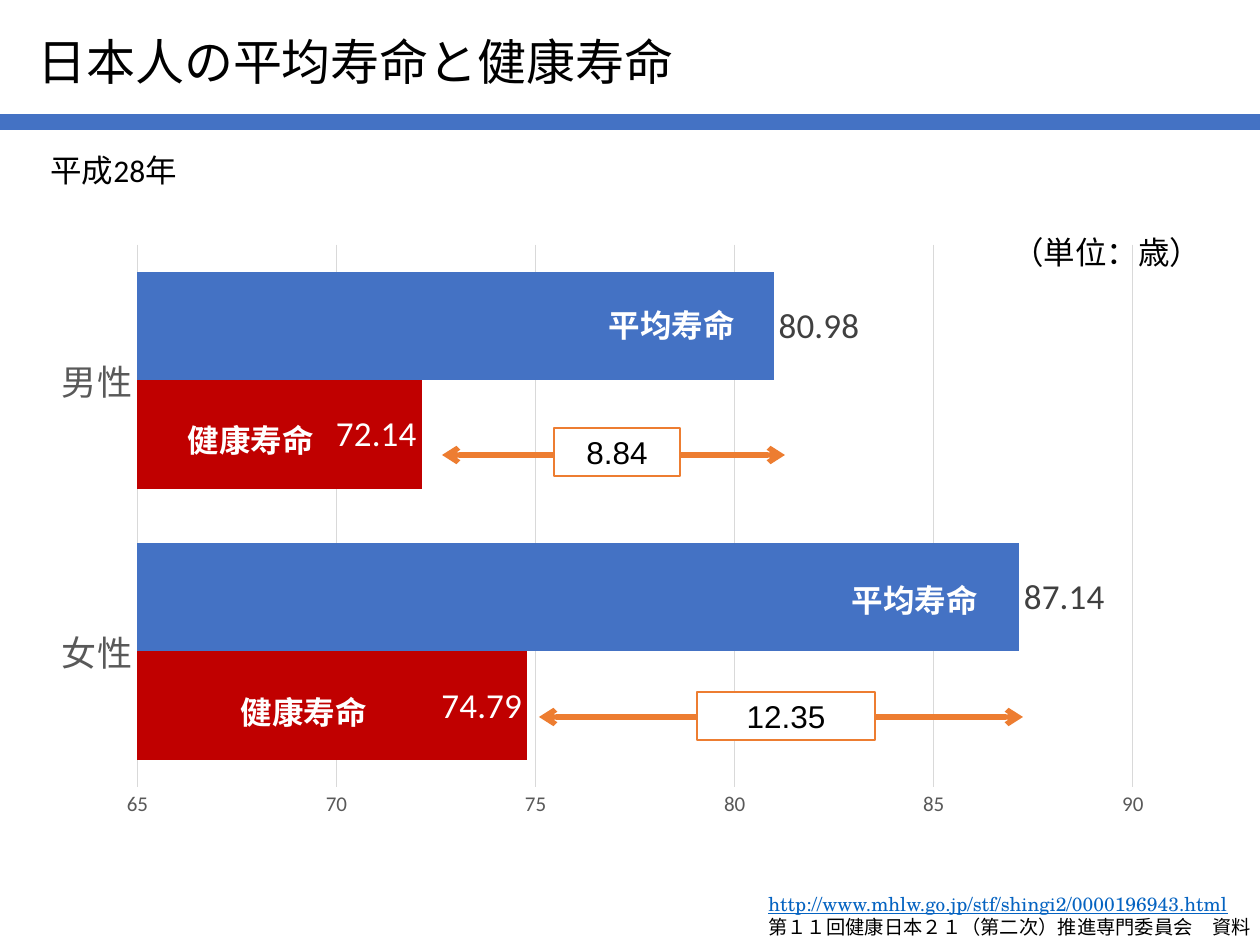
"""Builds a slide comparing average and healthy life expectancy in Japan."""
import pptx
import pptx.chart.data
import pptx.dml.color
import pptx.enum.chart
import pptx.enum.shapes
import pptx.enum.text
import pptx.oxml
import pptx.oxml.ns
import pptx.util
from lxml import etree

PX = 914400 / 126
RGB = pptx.dml.color.RGBColor
BLACK = RGB(0x00, 0x00, 0x00)
WHITE = RGB(0xFF, 0xFF, 0xFF)
BLUE = RGB(0x44, 0x72, 0xC4)
RED = RGB(0xC0, 0x00, 0x00)
ORANGE = RGB(0xED, 0x7D, 0x31)
LINK_BLUE = RGB(0x05, 0x63, 0xC1)
AXIS_GRAY = RGB(0x59, 0x59, 0x59)
LABEL_GRAY = RGB(0x40, 0x40, 0x40)
GRID_GRAY = RGB(0xD9, 0xD9, 0xD9)
ALIGN = pptx.enum.text.PP_ALIGN
LABEL_POSITION = pptx.enum.chart.XL_LABEL_POSITION


def add_text(frame, lines, size, font="Calibri", align=ALIGN.LEFT, bold=False):
    frame.word_wrap = True
    for index, (words, color, underline) in enumerate(lines):
        paragraph = frame.add_paragraph() if index else frame.paragraphs[0]
        paragraph.alignment = align
        run = paragraph.add_run()
        run.text = words
        run.font.size = pptx.util.Pt(size)
        run.font.name = font
        run.font.bold = bold
        run.font.underline = underline
        run.font.color.rgb = color


def add_line(shapes, left, right, y, color, width):
    line = shapes.add_connector(
        pptx.enum.shapes.MSO_CONNECTOR.STRAIGHT,
        *[round(v * PX) for v in (left, y, right, y)])
    line.line.color.rgb = color
    line.line.width = pptx.util.Pt(width)
    etree.SubElement(line._element.spPr, pptx.oxml.ns.qn("a:effectLst"))
    return line


presentation = pptx.Presentation()
presentation.slide_width = round(1260 * PX)
presentation.slide_height = round(945 * PX)
slide = presentation.slides.add_slide(presentation.slide_layouts[6])

add_line(slide.shapes, 0, 1260, 122, BLUE, 9)

life_data = pptx.chart.data.CategoryChartData(number_format="0.00")
life_data.categories = ["女性", "男性"]
life_data.add_series("健康寿命", (74.79, 72.14))
life_data.add_series("平均寿命", (87.14, 80.98))
life_chart = slide.shapes.add_chart(
    pptx.enum.chart.XL_CHART_TYPE.BAR_CLUSTERED,
    *[round(v * PX) for v in (60, 244, 1106, 617)], life_data).chart
life_chart.has_legend = False
life_chart.has_title = False
life_chart.font.name = "Calibri"
life_chart.font.size = pptx.util.Pt(10)

bars = life_chart.plots[0]
bars.gap_width = 50
bars.overlap = 0
bars.vary_by_categories = False
for series, fill, ink, position in zip(
        bars.series, (RED, BLUE), (WHITE, LABEL_GRAY),
        (LABEL_POSITION.INSIDE_END, LABEL_POSITION.OUTSIDE_END)):
    series.format.fill.solid()
    series.format.fill.fore_color.rgb = fill
    values = series.data_labels
    values.show_value = True
    values.position = position
    values.font.name = "Calibri"
    values.font.size = pptx.util.Pt(20)
    values.font.color.rgb = ink

sexes, ages = life_chart.category_axis, life_chart.value_axis
for axis, size in ((sexes, 20), (ages, 12)):
    axis.major_tick_mark = pptx.enum.chart.XL_TICK_MARK.NONE
    axis.minor_tick_mark = pptx.enum.chart.XL_TICK_MARK.NONE
    axis.tick_labels.font.name = "Calibri"
    axis.tick_labels.font.size = pptx.util.Pt(size)
    axis.tick_labels.font.color.rgb = AXIS_GRAY
ages.minimum_scale, ages.maximum_scale, ages.major_unit = 65, 90, 5
ages.tick_labels.number_format = "0"
ages.tick_labels.number_format_is_linked = False
ages.format.line.fill.background()
for rule in (sexes.format.line, ages.major_gridlines.format.line):
    rule.color.rgb = GRID_GRAY
    rule.width = pptx.util.Pt(0.75)

plot_area = life_chart._chartSpace.chart.plotArea
for old_layout in plot_area.findall(pptx.oxml.ns.qn("c:layout")):
    plot_area.remove(old_layout)
plot_area.insert(0, pptx.oxml.parse_xml(
    f'<c:layout {pptx.oxml.ns.nsdecls("c")}><c:manualLayout>'
    '<c:layoutTarget val="inner"/><c:xMode val="edge"/><c:yMode val="edge"/>'
    '<c:x val="0.07"/><c:y val="0"/><c:w val="0.9"/><c:h val="0.88"/>'
    '</c:manualLayout></c:layout>'))

for words, box, size, align, ink, bold in (
        ("日本人の平均寿命と健康寿命", (25, 25, 707, 72), 28, ALIGN.LEFT, BLACK, False),
        ("平成28年", (38, 145, 168, 50), 18, ALIGN.LEFT, BLACK, False),
        ("（単位：歳）", (1000, 227, 218, 50), 18, ALIGN.LEFT, BLACK, False),
        ("健康寿命", (170, 415, 156, 50), 18, ALIGN.RIGHT, WHITE, True),
        ("健康寿命", (223, 687, 156, 50), 18, ALIGN.RIGHT, WHITE, True),
        ("平均寿命", (587, 300, 169, 50), 18, ALIGN.CENTER, WHITE, True),
        ("平均寿命", (830, 575, 169, 50), 18, ALIGN.CENTER, WHITE, True)):
    caption = slide.shapes.add_textbox(*[round(v * PX) for v in box])
    add_text(caption.text_frame, [(words, ink, False)], size, align=align, bold=bold)

citation = slide.shapes.add_textbox(*[round(v * PX) for v in (756, 886, 522, 59)])
add_text(citation.text_frame, [
    ("http://www.mhlw.go.jp/stf/shingi2/0000196943.html", LINK_BLUE, True),
    ("第１１回健康日本２１（第二次）推進専門委員会　資料", BLACK, False),
], 11, "TeX Gyre Schola", ALIGN.JUSTIFY)

for years, left, right, y, box in (
        ("12.35", 539, 1023, 717, (697, 692, 178, 48)),
        ("8.84", 442, 785, 455, (554, 428, 126, 48))):
    gap = slide.shapes.add_group_shape()
    span = add_line(gap.shapes, left, right, y, ORANGE, 3)
    for end in ("a:headEnd", "a:tailEnd"):
        etree.SubElement(span.line._get_or_add_ln(), pptx.oxml.ns.qn(end), type="arrow")
    difference = gap.shapes.add_shape(
        pptx.enum.shapes.MSO_SHAPE.RECTANGLE, *[round(v * PX) for v in box])
    difference.shadow.inherit = False
    difference.fill.solid()
    difference.fill.fore_color.rgb = WHITE
    difference.line.color.rgb = ORANGE
    difference.line.width = pptx.util.Pt(0.75)
    frame = difference.text_frame
    frame.margin_left = frame.margin_right = round(9 * PX)
    frame.margin_top = frame.margin_bottom = round(5 * PX)
    add_text(frame, [(years, BLACK, False)], 18, "Arial", ALIGN.CENTER)

presentation.save("out.pptx")
